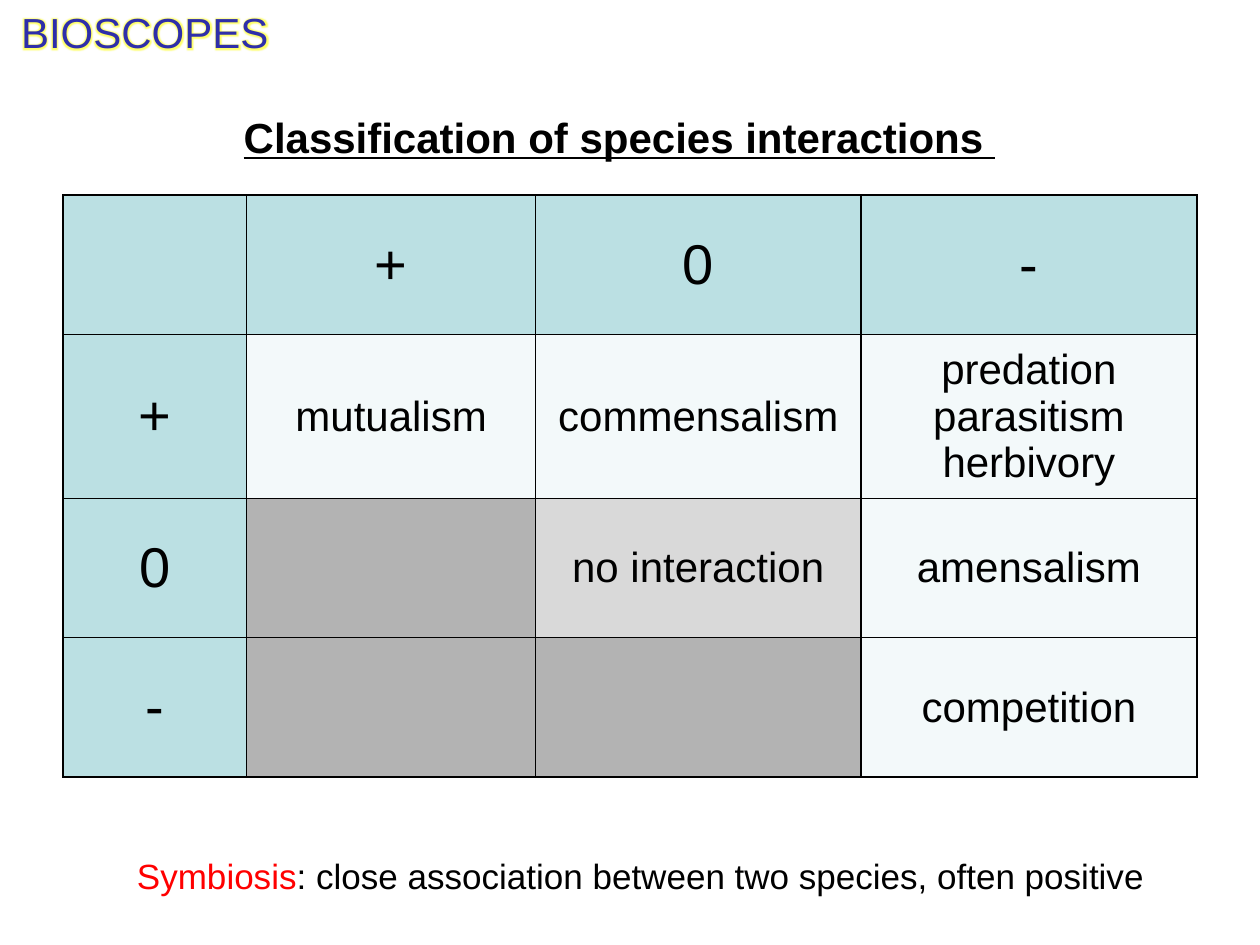
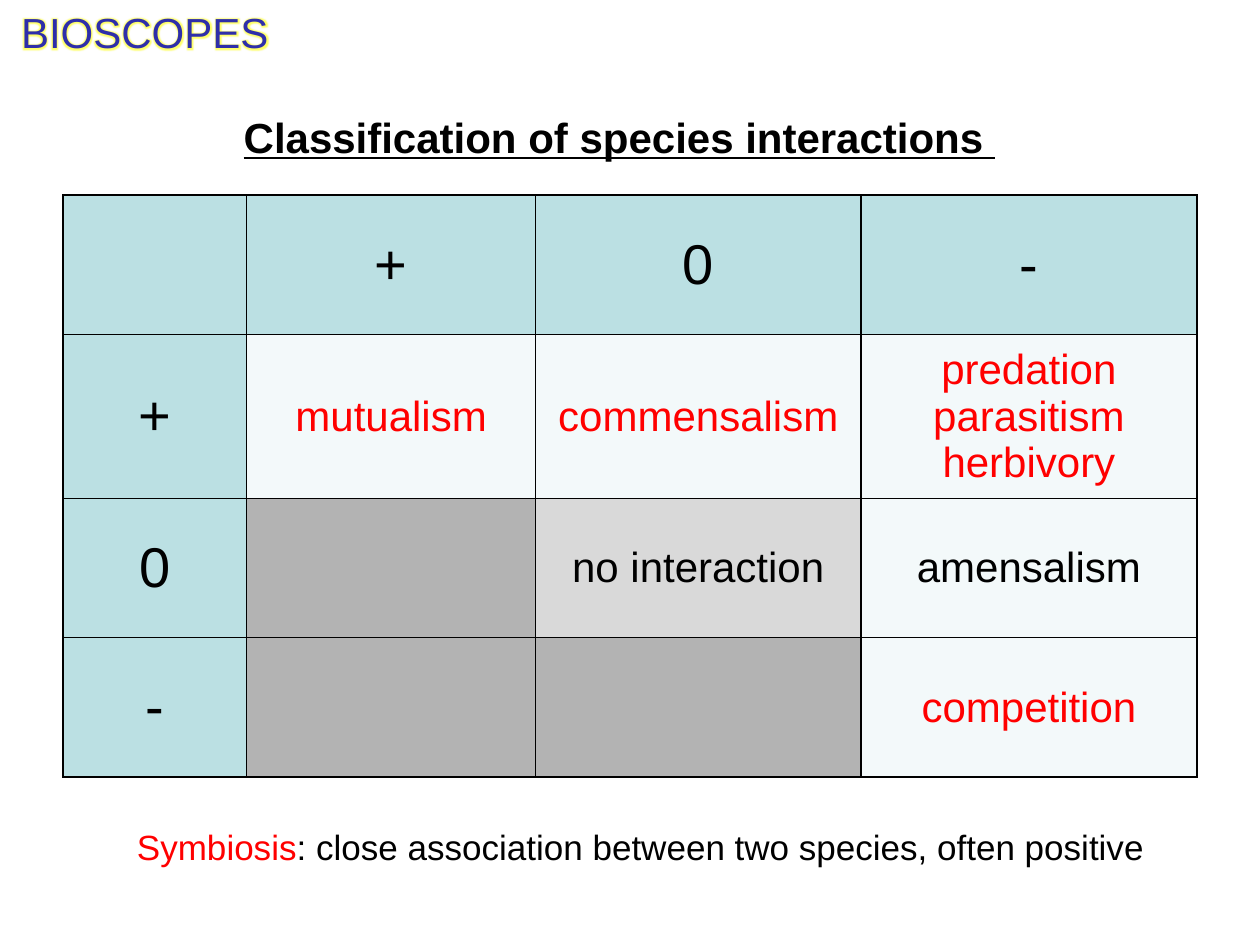
from lxml import etree
from pptx import Presentation
from pptx.dml.color import RGBColor
from pptx.enum.text import MSO_ANCHOR, MSO_AUTO_SIZE, PP_ALIGN
from pptx.oxml import parse_xml
from pptx.oxml.ns import nsdecls, qn
from pptx.util import Pt

FONT = "Arial"
BLACK = RGBColor(0x00, 0x00, 0x00)
RED = RGBColor(0xFF, 0x00, 0x00)
NAVY = RGBColor(0x2E, 0x2E, 0xAA)
GLOW = RGBColor(0xFF, 0xFF, 0x00)
HEADER = RGBColor(0xBB, 0xE0, 0xE3)
PALE = RGBColor(0xF3, 0xF9, 0xFA)
NEUTRAL = RGBColor(0xD9, 0xD9, 0xD9)
UNUSED = RGBColor(0xB3, 0xB3, 0xB3)

# Boxes are left, top, width, height in points.
HEADING_BOX = (12, 60, 684, 36.5)
COURSE_BOX = (3.5, 0, 158.5, 36)
MATRIX_BOX = (36, 111.5, 648, 332.6)
DEFINITION_LEFT, DEFINITION_WIDTH, DEFINITION_HEIGHT = 66, 606, 31.5

COLUMN_SHARES = (105, 165, 186, 192)
ROW_SHARES = (79.7, 93.6, 79.7, 79.7)
INTERACTIONS = (
    ("", "+", "0", "-"),
    ("+", "mutualism", "commensalism", "predation\nparasitism\nherbivory"),
    ("0", "", "no interaction", "amensalism"),
    ("-", "", "", "competition"),
)
COVERED_TOPICS = {
    "mutualism", "commensalism", "predation\nparasitism\nherbivory", "competition",
}


def add_run(paragraph, text, size, color):
    run = paragraph.add_run()
    run.text = text
    run.font.name = FONT
    run.font.size = Pt(size)
    run.font.color.rgb = color
    return run


def centred_paragraph(frame, wrap=True):
    """Set up a text frame and return its first paragraph."""
    frame.word_wrap = wrap
    frame.auto_size = MSO_AUTO_SIZE.SHAPE_TO_FIT_TEXT
    frame.vertical_anchor = MSO_ANCHOR.TOP
    paragraph = frame.paragraphs[0]
    paragraph.alignment = PP_ALIGN.CENTER
    return paragraph


def add_heading(slide, box):
    heading = slide.shapes.title
    heading.left, heading.top, heading.width, heading.height = map(Pt, box)
    paragraph = centred_paragraph(heading.text_frame)
    run = add_run(paragraph, "Classification of species interactions ", 24, BLACK)
    run.font.bold = True
    run.font.underline = True


def add_course_name(slide, box):
    course = slide.shapes.add_textbox(*map(Pt, box))
    paragraph = centred_paragraph(course.text_frame, wrap=False)
    run = add_run(paragraph, "BIOSCOPES", 24, NAVY)
    glow = parse_xml(
        f'<a:effectLst {nsdecls("a")}><a:glow rad="{Pt(5)}"><a:srgbClr val="{GLOW}">'
        '<a:alpha val="60000"/></a:srgbClr></a:glow></a:effectLst>'
    )
    run.font.fill  # the fill element comes before the effects
    run._r.get_or_add_rPr().find(qn("a:solidFill")).addnext(glow)


def add_definition(slide, box):
    definition = slide.shapes.add_textbox(*map(Pt, box))
    paragraph = centred_paragraph(definition.text_frame)
    add_run(paragraph, "Symbiosis", 20, RED)
    add_run(paragraph, ": close association between two species, often positive ", 20, BLACK)


def add_borders(cell):
    """Draw a thin black line on all four sides of a cell."""
    properties = cell._tc.get_or_add_tcPr()
    for index, side in enumerate(("lnL", "lnR", "lnT", "lnB")):
        line = etree.Element(qn(f"a:{side}"), w=str(Pt(1)))
        fill = etree.SubElement(line, qn("a:solidFill"))
        etree.SubElement(fill, qn("a:srgbClr"), val=str(BLACK))
        properties.insert(index, line)


def cell_fill(text, is_header):
    if is_header:
        return HEADER
    if not text:
        return UNUSED
    return NEUTRAL if text == "no interaction" else PALE


def fill_cell(cell, text, is_header, color):
    cell.fill.solid()
    cell.fill.fore_color.rgb = cell_fill(text, is_header)
    add_borders(cell)
    cell.vertical_anchor = MSO_ANCHOR.MIDDLE
    if not text:
        return
    frame = cell.text_frame
    for index, line in enumerate(text.split("\n")):
        paragraph = frame.add_paragraph() if index else frame.paragraphs[0]
        paragraph.alignment = PP_ALIGN.CENTER
        add_run(paragraph, line, 32 if is_header else 24, color)


def add_matrix(slide, box, highlighted):
    width, height = box[2:]
    matrix = slide.shapes.add_table(
        len(ROW_SHARES), len(COLUMN_SHARES), *map(Pt, box)
    ).table
    matrix.first_row = False
    matrix.horz_banding = False
    for column, share in zip(matrix.columns, COLUMN_SHARES):
        column.width = Pt(width * share / sum(COLUMN_SHARES))
    for row, share in zip(matrix.rows, ROW_SHARES):
        row.height = Pt(height * share / sum(ROW_SHARES))
    for r, texts in enumerate(INTERACTIONS):
        for c, text in enumerate(texts):
            color = RED if text in highlighted else BLACK
            fill_cell(matrix.cell(r, c), text, r == 0 or c == 0, color)


def add_interactions_slide(deck, definition_top, highlighted=()):
    slide = deck.slides.add_slide(deck.slide_layouts[5])
    add_heading(slide, HEADING_BOX)
    add_definition(
        slide, (DEFINITION_LEFT, definition_top, DEFINITION_WIDTH, DEFINITION_HEIGHT)
    )
    add_course_name(slide, COURSE_BOX)
    add_matrix(slide, MATRIX_BOX, highlighted)


def main():
    deck = Presentation()
    deck.slide_width, deck.slide_height = Pt(720), Pt(540)
    add_interactions_slide(deck, definition_top=484.5)
    add_interactions_slide(deck, definition_top=468, highlighted=COVERED_TOPICS)
    deck.save("out.pptx")


if __name__ == "__main__":
    main()
